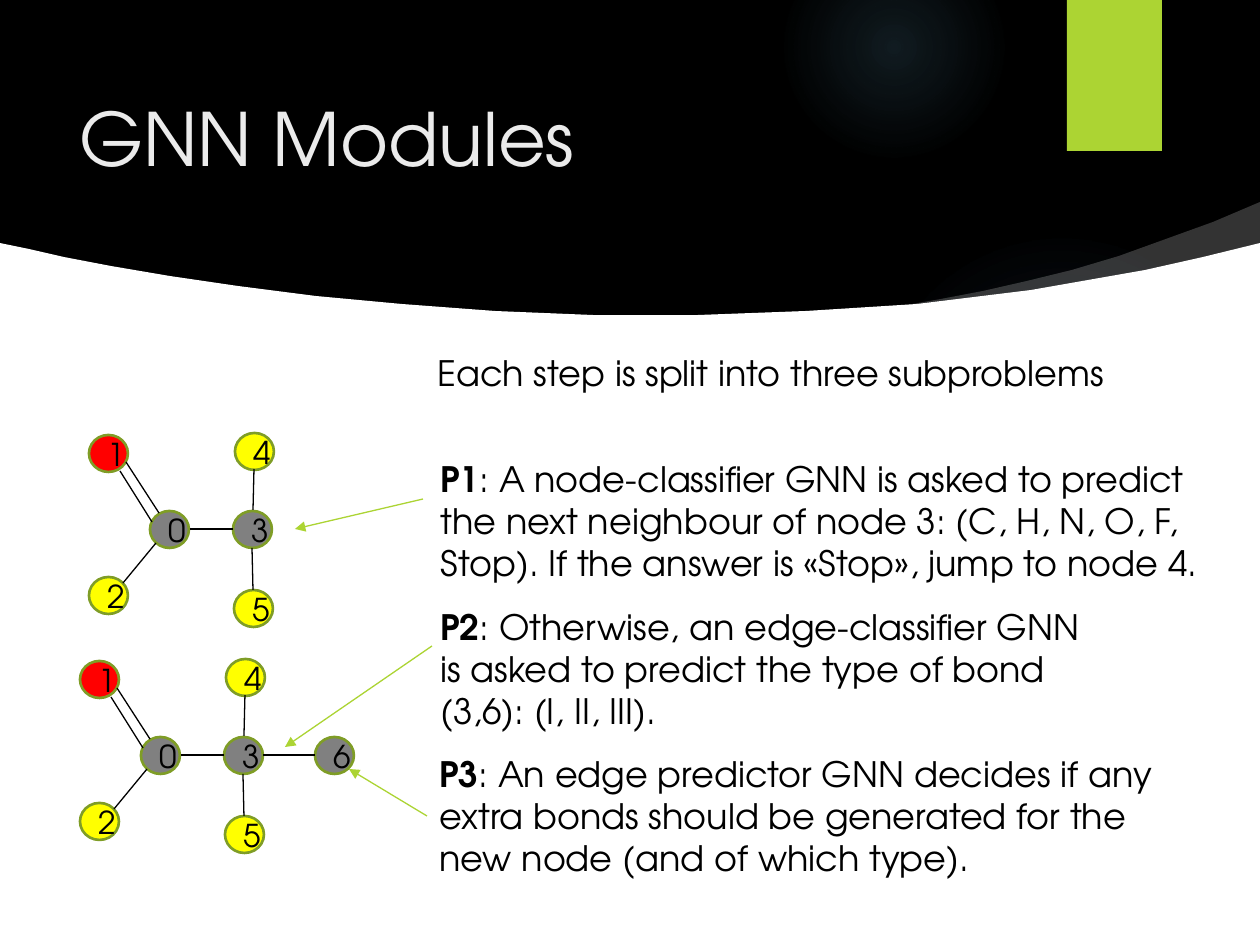
"""Build the GNN Modules slide with two molecule graphs and three subproblems."""
import lxml.etree
import pptx
import pptx.dml.color
import pptx.enum.shapes
import pptx.enum.text
import pptx.oxml
import pptx.oxml.ns
import pptx.util

RGB = pptx.dml.color.RGBColor
BLACK = RGB(0, 0, 0)
WHITE = RGB(255, 255, 255)
PALE = RGB(0xEB, 0xEB, 0xEB)
GREEN = RGB(0xAC, 0xD4, 0x33)
OLIVE = RGB(0x7F, 0x9D, 0x26)
RED = RGB(255, 0, 0)
GRAY = RGB(0x80, 0x80, 0x80)
YELLOW = RGB(255, 255, 0)
FONT = "TeX Gyre Adventor"
SCALE = 914400 / 126
NS = 'xmlns:a="http://schemas.openxmlformats.org/drawingml/2006/main"'
KIND = pptx.enum.shapes.MSO_SHAPE
qn = pptx.oxml.ns.qn


def px(*nums):
    return [pptx.util.Emu(round(num * SCALE)) for num in nums]


def link(ends, color, arrow=False):
    line = shapes.add_connector(pptx.enum.shapes.MSO_CONNECTOR.STRAIGHT, *px(*ends))
    line.line.color.rgb = color
    line.line.width = pptx.util.Pt(0.75)
    props = line._element.spPr
    lxml.etree.SubElement(props, qn("a:effectLst"))
    if arrow:
        tail = lxml.etree.SubElement(props.find(qn("a:ln")), qn("a:tailEnd"))
        tail.set("type", "triangle")


deck = pptx.Presentation()
deck.slide_width, deck.slide_height = px(1260, 945)
slide = deck.slides.add_slide(deck.slide_layouts[6])
slide.background.fill.solid()
slide.background.fill.fore_color.rgb = BLACK
shapes = slide.shapes

glows = [
    (868, 231, 388, [(0, 7), (36, 6), (69, 0)]),
    (784, -63, 220, [(0, 14), (36, 7), (73, 0)]),
]
for left, top, size, stops in glows:
    glow = shapes.add_shape(KIND.OVAL, *px(left, top, size, size))
    glow.shadow.inherit = False
    glow.line.fill.background()
    glow.fill.background()
    marks = "".join(
        f'<a:gs pos="{pos * 1000}"><a:srgbClr val="7AC4F0">'
        f'<a:alpha val="{alpha * 1000}"/></a:srgbClr></a:gs>'
        for pos, alpha in stops
    )
    grad = pptx.oxml.parse_xml(
        f'<a:gradFill {NS}><a:gsLst>{marks}</a:gsLst><a:path path="circle">'
        '<a:fillToRect l="50000" t="50000" r="50000" b="50000"/></a:path></a:gradFill>'
    )
    props = glow._element.spPr
    props.replace(props.find(qn("a:noFill")), grad)

tab = shapes.add_shape(KIND.RECTANGLE, *px(1067, 0, 95, 151))
tab.shadow.inherit = False
tab.fill.solid()
tab.fill.fore_color.rgb = GREEN
tab.line.fill.background()
tab._element.spPr.find(qn("a:effectLst")).append(pptx.oxml.parse_xml(
    f'<a:outerShdw {NS} blurRad="38100" dist="25400" dir="5400000">'
    '<a:srgbClr val="000000"><a:alpha val="45000"/></a:srgbClr></a:outerShdw>'
))

swoosh = [
    (1260, 202), (1260, 267), (1249, 270), (1063, 301), (906, 315), (901, 306),
    (941, 299), (983, 291), (1027, 281), (1072, 270), (1119, 256), (1166, 239),
    (1213, 222),
]
page = [
    (0, 629), (0, 243), (29, 249), (64, 257), (111, 266), (170, 276), (238, 286),
    (316, 296), (402, 304), (495, 311), (593, 315), (698, 315), (806, 311),
    (917, 304), (1031, 290), (1145, 270), (1203, 257), (1260, 243), (1260, 629),
]
for points, alpha in [(swoosh, 20), (page, 100)]:
    pen = shapes.build_freeform(*points[0], scale=SCALE)
    pen.add_line_segments(points[1:])
    curve = pen.convert_to_shape()
    curve.shadow.inherit = False
    curve.line.fill.background()
    curve.fill.solid()
    curve.fill.fore_color.rgb = WHITE
    if alpha < 100:
        tint = curve._element.spPr.find(".//" + qn("a:srgbClr"))
        lxml.etree.SubElement(tint, qn("a:alpha")).set("val", str(alpha * 1000))

floor = shapes.add_shape(KIND.RECTANGLE, *px(0, 541, 1260, 404))
floor.shadow.inherit = False
floor.fill.solid()
floor.fill.fore_color.rgb = WHITE
floor.line.fill.background()

atoms = [
    ("1", 89, 435, RED), ("0", 150, 511, GRAY), ("2", 89, 577, YELLOW),
    ("3", 233, 511, GRAY), ("4", 235, 433, YELLOW), ("5", 234, 590, YELLOW),
]
bonds = [
    (126, 462, 159, 513), (120, 471, 152, 522), (190, 529, 233, 529),
    (156, 543, 123, 583), (252, 548, 253, 590), (254, 469, 253, 510),
]
extra = ("6", 324, 511, GRAY)
join = (272, 529, 324, 529)
graphs = [(0, 0, atoms, bonds), (-9, 226, atoms + [extra], bonds + [join])]
for dx, dy, nodes, edges in graphs:
    for name, left, top, color in nodes:
        node = shapes.add_shape(KIND.OVAL, *px(left + dx, top + dy, 39, 37))
        node.shadow.inherit = False
        node.fill.solid()
        node.fill.fore_color.rgb = color
        node.line.color.rgb = OLIVE
        node.line.width = pptx.util.Pt(1.5)
        frame = node.text_frame
        frame.text = name
        frame.vertical_anchor = pptx.enum.text.MSO_ANCHOR.MIDDLE
        para = frame.paragraphs[0]
        para.alignment = pptx.enum.text.PP_ALIGN.CENTER
        font = para.runs[0].font
        font.name, font.size = FONT, pptx.util.Pt(18)
        font.color.rgb = BLACK
    for x1, y1, x2, y2 in edges:
        link((x1 + dx, y1 + dy, x2 + dx, y2 + dy), BLACK)

texts = [
    ((67, 87, 956, 140), "", "GNN Modules", 42, PALE),
    ((425, 345, 780, 55), "", "Each step is split into three subproblems", 20, BLACK),
    ((428, 451, 794, 140), "P1", ": A node-classifier GNN is asked to predict the next "
     "neighbour of node 3: (C, H, N, O, F, Stop). If the answer is «Stop», "
     "jump to node 4.", 20, BLACK),
    ((428, 599, 682, 140), "P2", ": Otherwise, an edge-classifier GNN is asked to predict "
     "the type of bond (3,6): (I, II, III).", 20, BLACK),
    ((427, 746, 743, 140), "P3", ": An edge predictor GNN decides if any extra bonds "
     "should be generated for the new node (and of which type).", 20, BLACK),
]
for place, head, body, size, color in texts:
    frame = shapes.add_textbox(*px(*place)).text_frame
    frame.word_wrap = True
    para = frame.paragraphs[0]
    para.text = head or body
    if head:
        para.runs[0].font.bold = True
        para.add_run().text = body
    for run in para.runs:
        run.font.name, run.font.size = FONT, pptx.util.Pt(size)
        run.font.color.rgb = color

for ends in [(423, 499, 295, 529), (432, 646, 285, 747), (427, 816, 349, 769)]:
    link(ends, GREEN, arrow=True)

deck.save("out.pptx")
